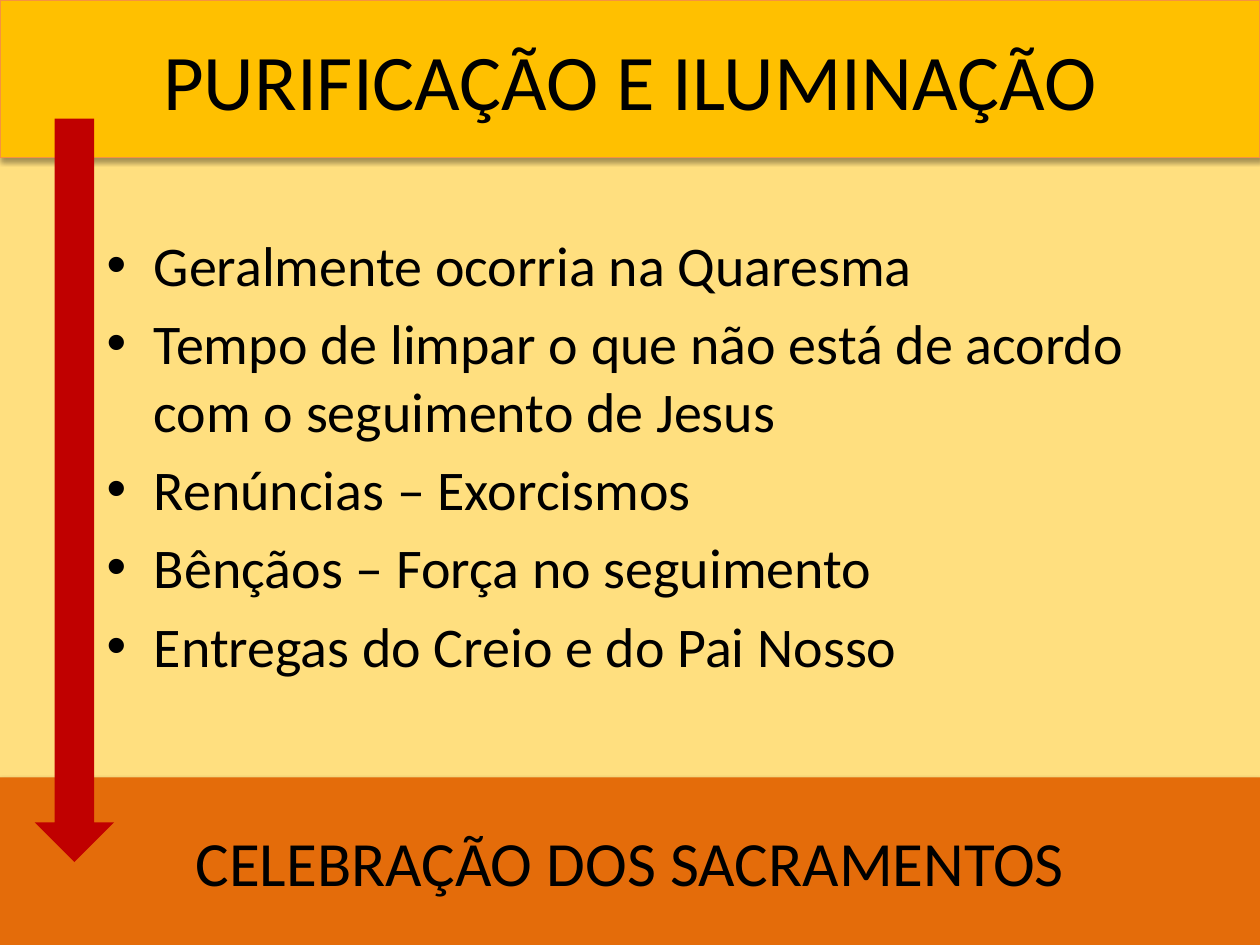
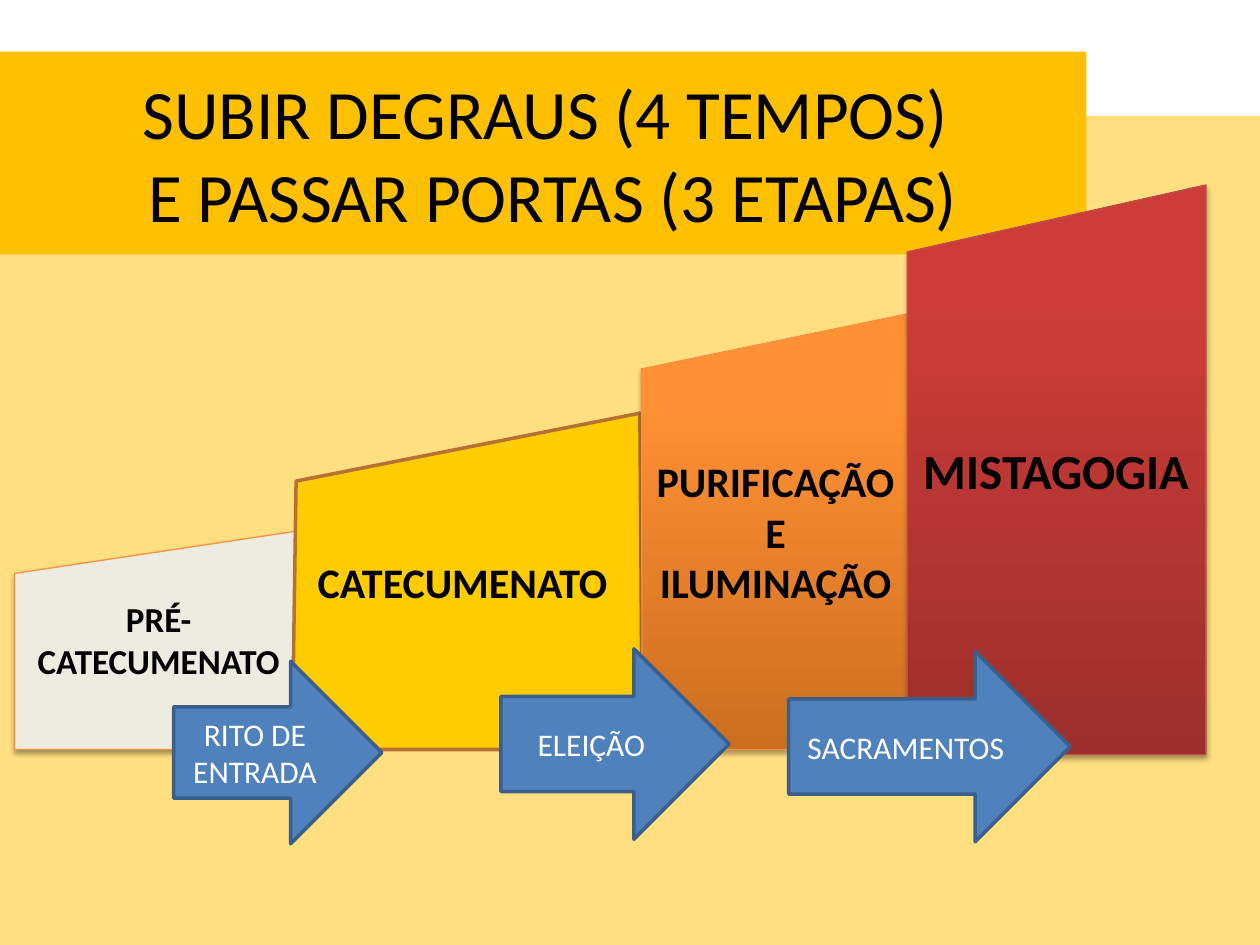
"""Build two slides on the stages of Christian initiation."""
from lxml.etree import SubElement
from pptx import Presentation
from pptx.dml.color import RGBColor
from pptx.enum.shapes import MSO_SHAPE
from pptx.enum.text import MSO_ANCHOR, PP_ALIGN
from pptx.oxml.ns import qn
from pptx.util import Cm, Pt

FONT = "Calibri"
BLACK = RGBColor(0x00, 0x00, 0x00)
WHITE = RGBColor(0xFF, 0xFF, 0xFF)
AMBER = RGBColor(0xFF, 0xC0, 0x00)
ORANGE = RGBColor(0xE4, 0x6C, 0x0A)
ORANGE_LINE = RGBColor(0xF6, 0x92, 0x40)
DARK_RED = RGBColor(0xC0, 0x00, 0x00)
IVORY = RGBColor(0xEE, 0xEC, 0xE1)
YELLOW = RGBColor(0xFF, 0xCC, 0x00)
BROWN = RGBColor(0xB7, 0x6F, 0x34)
ORANGE_RAMP = (RGBColor(0xCC, 0x6E, 0x20), RGBColor(0xFF, 0x90, 0x34))
RED_RAMP = (RGBColor(0x9C, 0x2F, 0x2D), RGBColor(0xCD, 0x3C, 0x38))
RED_LINE = RGBColor(0xBF, 0x4C, 0x48)
BLUE = RGBColor(0x4F, 0x81, 0xBD)
BLUE_LINE = RGBColor(0x3A, 0x5F, 0x8C)

SLIDE_WIDTH, SLIDE_HEIGHT = 25.4, 19.05
BACKDROP_TOP = 2.34
STEP_BASE = 15.11

TOPICS = (
    "Geralmente ocorria na Quaresma",
    "Tempo de limpar o que não está de acordo com o seguimento de Jesus",
    "Renúncias – Exorcismos",
    "Bênçãos – Força no seguimento",
    "Entregas do Creio e do Pai Nosso",
)


def write_text(shape, text, size, color=BLACK, bold=False, align=PP_ALIGN.CENTER,
               anchor=MSO_ANCHOR.MIDDLE):
    """Fill a shape with uniformly formatted text."""
    frame = shape.text_frame
    frame.text = text
    frame.word_wrap = True
    frame.vertical_anchor = anchor
    for paragraph in frame.paragraphs:
        paragraph.alignment = align
        for run in paragraph.runs:
            run.font.name = FONT
            run.font.size = Pt(size)
            run.font.bold = bold
            run.font.color.rgb = color


def paint(shape, fill, line=None, line_width=0.75, shadow=False):
    """Set a solid or two-colour fill, the outline and the shadow."""
    if isinstance(fill, RGBColor):
        shape.fill.solid()
        shape.fill.fore_color.rgb = fill
    else:
        shape.fill.gradient()
        shape.fill.gradient_angle = 90
        for stop, color, position in zip(shape.fill.gradient_stops, fill, (0, 0.8)):
            stop.color.rgb = color
            stop.position = position
    if line is None:
        shape.line.fill.background()
    else:
        shape.line.color.rgb = line
        shape.line.width = Pt(line_width)
    shape.shadow.inherit = False
    if shadow:
        add_shadow(shape)


def add_shadow(shape):
    """Add a soft black shadow below a shape."""
    effects = shape.element.spPr.find(qn("a:effectLst"))
    outer = SubElement(effects, qn("a:outerShdw"), blurRad=str(Pt(3.1)),
                       dist=str(Pt(1.8)), dir="5400000", rotWithShape="0")
    color = SubElement(outer, qn("a:srgbClr"), val="000000")
    SubElement(color, qn("a:alpha"), val="35000")


def add_block(slide, kind, box, fill, **style):
    """Add a painted preset shape; the box is given in centimetres."""
    shape = slide.shapes.add_shape(kind, *map(Cm, box))
    paint(shape, fill, **style)
    return shape


def add_backdrop(slide):
    """Add the half-transparent amber field shared by the slides."""
    box = (0, BACKDROP_TOP, SLIDE_WIDTH, SLIDE_HEIGHT - BACKDROP_TOP)
    backdrop = add_block(slide, MSO_SHAPE.RECTANGLE, box, AMBER)
    color = backdrop.element.spPr.find(qn("a:solidFill"))[0]
    SubElement(color, qn("a:alpha"), val="50000")


def add_band(slide, box, fill, text, size, **style):
    """Add a coloured band with a centred heading."""
    band = add_block(slide, MSO_SHAPE.RECTANGLE, box, fill, **style)
    write_text(band, text, size)


def add_bullets(slide, box, topics):
    """Add a bulleted list."""
    text_box = slide.shapes.add_textbox(*map(Cm, box))
    write_text(text_box, "\n".join(topics), 32, align=PP_ALIGN.LEFT, anchor=MSO_ANCHOR.TOP)
    for paragraph in text_box.text_frame.paragraphs:
        paragraph.space_before = Pt(6.4)
        properties = paragraph._p.get_or_add_pPr()
        properties.set("marL", str(Cm(0.95)))
        properties.set("indent", str(Cm(-0.95)))
        SubElement(properties, qn("a:buFont"), typeface="Arial")
        SubElement(properties, qn("a:buChar"), char="•")


def add_step(slide, corners, fill, text, size, **style):
    """Add a step with a slanted top from its corners in centimetres."""
    start, *others = [(Cm(x), Cm(y)) for x, y in corners]
    builder = slide.shapes.build_freeform(*start)
    builder.add_line_segments(others, close=True)
    step = builder.convert_to_shape()
    paint(step, fill, **style)
    write_text(step, text, size, bold=True)


def add_gate(slide, box, text):
    """Add a blue arrow that leads from one step to the next."""
    gate = add_block(slide, MSO_SHAPE.RIGHT_ARROW, box, BLUE, line=BLUE_LINE, line_width=2)
    write_text(gate, text, 18, color=WHITE)


def build_purification(slide):
    """Build the slide on purification and illumination."""
    add_backdrop(slide)
    add_bullets(slide, (1.9, 4.52, 23.2, 12.5), TOPICS)
    add_band(slide, (0, 0, SLIDE_WIDTH, 3.18), AMBER, "PURIFICAÇÃO E ILUMINAÇÃO", 45,
             line=ORANGE_LINE, shadow=True)
    add_band(slide, (0, 15.67, SLIDE_WIDTH, 3.38), ORANGE, "CELEBRAÇÃO DOS SACRAMENTOS", 36,
             shadow=True)
    add_block(slide, MSO_SHAPE.DOWN_ARROW, (0.7, 2.39, 1.6, 14.99), DARK_RED)


def build_steps(slide):
    """Build the slide with four rising steps and three gates."""
    add_backdrop(slide)
    add_step(slide, ((0.3, 11.56), (6.1, 10.69), (6.1, STEP_BASE), (0.3, STEP_BASE)),
             IVORY, "PRÉ-CATECUMENATO", 20, line=ORANGE_LINE, shadow=True)
    add_step(slide, ((5.97, 9.7), (12.9, 8.33), (12.95, STEP_BASE), (5.89, STEP_BASE)),
             YELLOW, "CATECUMENATO ", 24, line=BROWN, line_width=2)
    add_step(slide, ((12.93, 7.44), (18.34, 6.32), (18.29, STEP_BASE), (12.95, STEP_BASE)),
             ORANGE_RAMP, "PURIFICAÇÃO\nE\nILUMINAÇÃO", 24, line=ORANGE_LINE, shadow=True)
    add_gate(slide, (3.5, 13.33, 4.2, 3.68), "RITO DE ENTRADA")
    add_gate(slide, (10.1, 13.08, 4.6, 3.84), "ELEIÇÃO")
    add_block(slide, MSO_SHAPE.RECTANGLE, (-0.1, 1.04, 22, 4.09), AMBER)
    title = slide.shapes.add_textbox(*map(Cm, (0, 1.5, 22.3, 3.18)))
    write_text(title, "SUBIR DEGRAUS (4 TEMPOS) \vE PASSAR PORTAS (3 ETAPAS)", 39.6)
    add_step(slide, ((18.29, 5.08), (24.31, 3.73), (24.31, 15.21), (18.29, 15.21)),
             RED_RAMP, "MISTAGOGIA", 28, line=RED_LINE, shadow=True)
    add_gate(slide, (15.9, 13.13, 5.68, 3.84), "SACRAMENTOS")


def main():
    """Create the presentation and save it."""
    presentation = Presentation()
    presentation.slide_width = Cm(SLIDE_WIDTH)
    presentation.slide_height = Cm(SLIDE_HEIGHT)
    blank = presentation.slide_layouts[6]
    for build in (build_purification, build_steps):
        build(presentation.slides.add_slide(blank))
    presentation.save("out.pptx")


if __name__ == "__main__":
    main()
